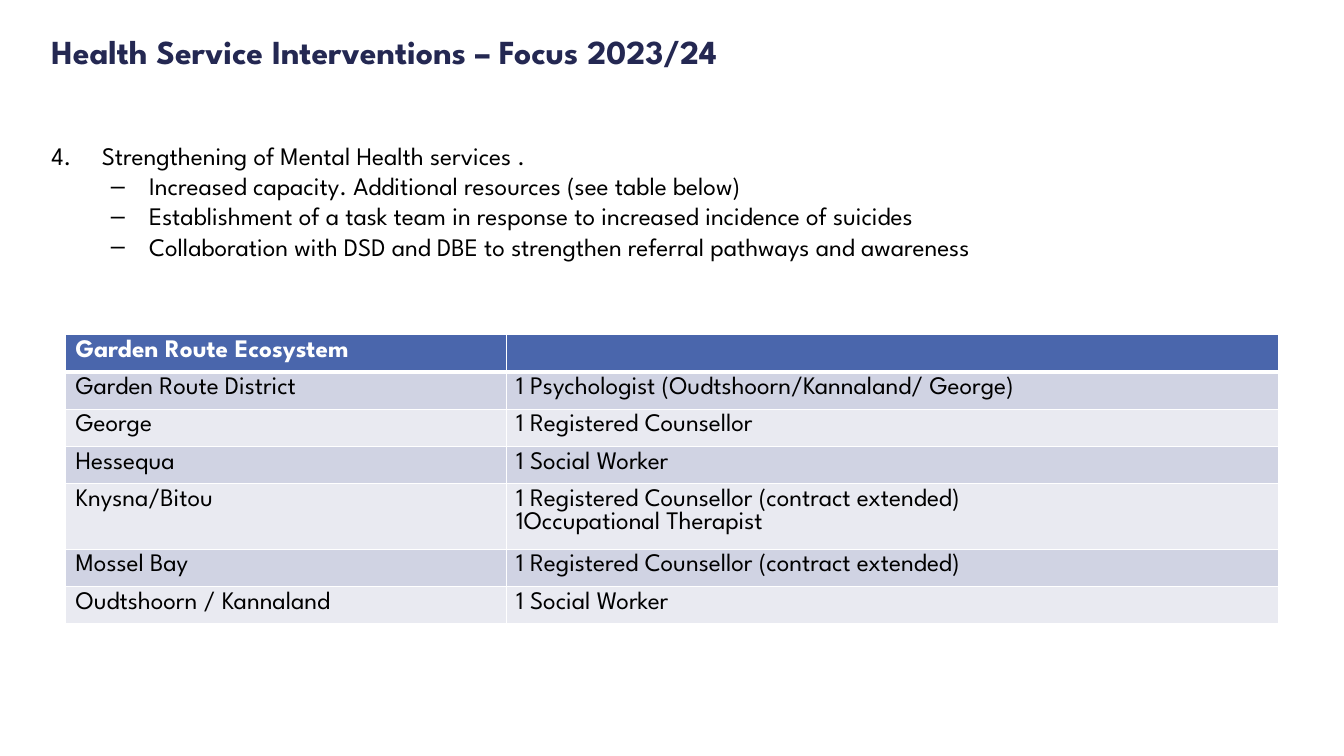
from dataclasses import dataclass

from lxml import etree
from pptx import Presentation
from pptx import util as u
from pptx.dml.color import RGBColor
from pptx.enum import text
from pptx.oxml import ns


@dataclass(frozen=True)
class Theme:
    font: str = "League Spartan"
    dash_font: str = "Arial"
    title_size: int = 24
    body_size: int = 18
    navy: str = "242852"
    black: str = "000000"
    white: str = "FFFFFF"
    header: str = "4A66AC"
    bands: tuple = ("D0D3E3", "E9EAF1")


THEME = Theme()


def write(paragraph, words, size=THEME.body_size, color=THEME.black, bold=False):
    """Put words in a paragraph with the given format."""
    run = paragraph.add_run()
    run.text = words
    run.font.name = THEME.font
    run.font.size = u.Pt(size)
    run.font.bold = bold
    run.font.color.rgb = RGBColor.from_string(color)


def add_xml(parent, tag, **attributes):
    return etree.SubElement(parent, ns.qn(tag), attributes)


class FocusSlide:
    def __init__(self, slide, theme):
        self.slide = slide
        self.theme = theme

    def text_frame(self, left, top, width, height):
        box = self.slide.shapes.add_textbox(
            *(u.Inches(n) for n in (left, top, width, height)))
        frame = box.text_frame
        frame.word_wrap = True
        frame.margin_left = frame.margin_right = u.Inches(0.08)
        frame.margin_top = frame.margin_bottom = u.Inches(0.08)
        return frame

    def title(self, words, *place):
        frame = self.text_frame(*place)
        frame.vertical_anchor = text.MSO_ANCHOR.MIDDLE
        write(frame.paragraphs[0], words, size=self.theme.title_size,
              color=self.theme.navy, bold=True)

    def numbered_list(self, number, heading, actions, *place):
        frame = self.text_frame(*place)
        for i, words in enumerate([heading, *actions]):
            paragraph = frame.paragraphs[0] if i == 0 else frame.add_paragraph()
            margin, indent = (0.97, -0.38) if i else (0.5, -0.5)
            properties = paragraph._p.get_or_add_pPr()
            properties.set("marL", str(u.Inches(margin)))
            properties.set("indent", str(u.Inches(indent)))
            if i:
                paragraph.level = 3
                add_xml(properties, "a:buFont", typeface=self.theme.dash_font)
                add_xml(properties, "a:buChar", char="–")
            else:
                add_xml(properties, "a:buAutoNum", type="arabicPeriod",
                        startAt=str(number))
            write(paragraph, words)

    def borders(self, cell, bottom):
        properties = cell._tc.get_or_add_tcPr()
        for side, width in (("L", 1), ("R", 1), ("T", 1), ("B", bottom)):
            line = add_xml(properties, f"a:ln{side}", w=str(u.Pt(width)))
            add_xml(add_xml(line, "a:solidFill"), "a:srgbClr", val=self.theme.white)

    def table(self, rows, column_widths, row_heights, left, top):
        grid = self.slide.shapes.add_table(
            len(rows), len(column_widths), u.Inches(left), u.Inches(top),
            u.Inches(sum(column_widths)), u.Inches(sum(row_heights))).table
        for column, width in zip(grid.columns, column_widths):
            column.width = u.Inches(width)
        for r, (row, height) in enumerate(zip(rows, row_heights)):
            grid.rows[r].height = u.Inches(height)
            is_header = r == 0
            fill = self.theme.header if is_header else self.theme.bands[(r - 1) % 2]
            ink = self.theme.white if is_header else self.theme.black
            for c, lines in enumerate(row):
                cell = grid.cell(r, c)
                cell.margin_bottom = 0  # keeps the rows at their set height
                self.borders(cell, bottom=3 if is_header else 1)
                cell.fill.solid()
                cell.fill.fore_color.rgb = RGBColor.from_string(fill)
                for i, words in enumerate(lines):
                    frame = cell.text_frame
                    paragraph = frame.add_paragraph() if i else frame.paragraphs[0]
                    write(paragraph, words, color=ink, bold=is_header)


def main():
    deck = Presentation()
    deck.slide_width, deck.slide_height = u.Inches(13.33), u.Inches(7.5)
    focus = FocusSlide(deck.slides.add_slide(deck.slide_layouts[6]), THEME)

    # Heading
    focus.title("Health Service Interventions – Focus 2023/24", 0.43, 0.2, 12.54, 0.61)

    # Mental health actions
    actions = [
        "Increased capacity. Additional resources (see table below)",
        "Establishment of a task team in response to increased incidence of suicides",
        "Collaboration with DSD and DBE to strengthen referral pathways and awareness",
    ]
    focus.numbered_list(4, "Strengthening of Mental Health services .", actions,
                        0.43, 1.31, 12.54, 5.35)

    # Additional posts by area: each cell is a list of lines
    posts = [
        (["Garden Route Ecosystem"], []),
        (["Garden Route District"], ["1 Psychologist (Oudtshoorn/Kannaland/ George)"]),
        (["George"], ["1 Registered Counsellor"]),
        (["Hessequa"], ["1 Social Worker"]),
        (["Knysna/Bitou"], ["1 Registered Counsellor (contract extended)",
                            "1Occupational Therapist"]),
        (["Mossel Bay"], ["1 Registered Counsellor (contract extended)"]),
        (["Oudtshoorn / Kannaland"], ["1 Social Worker"]),
    ]
    heights = [0.64 if len(staff) > 1 else 0.37 for _, staff in posts]
    focus.table(posts, [4.37, 7.66], heights, 0.65, 3.32)

    deck.save("out.pptx")


if __name__ == "__main__":
    main()
